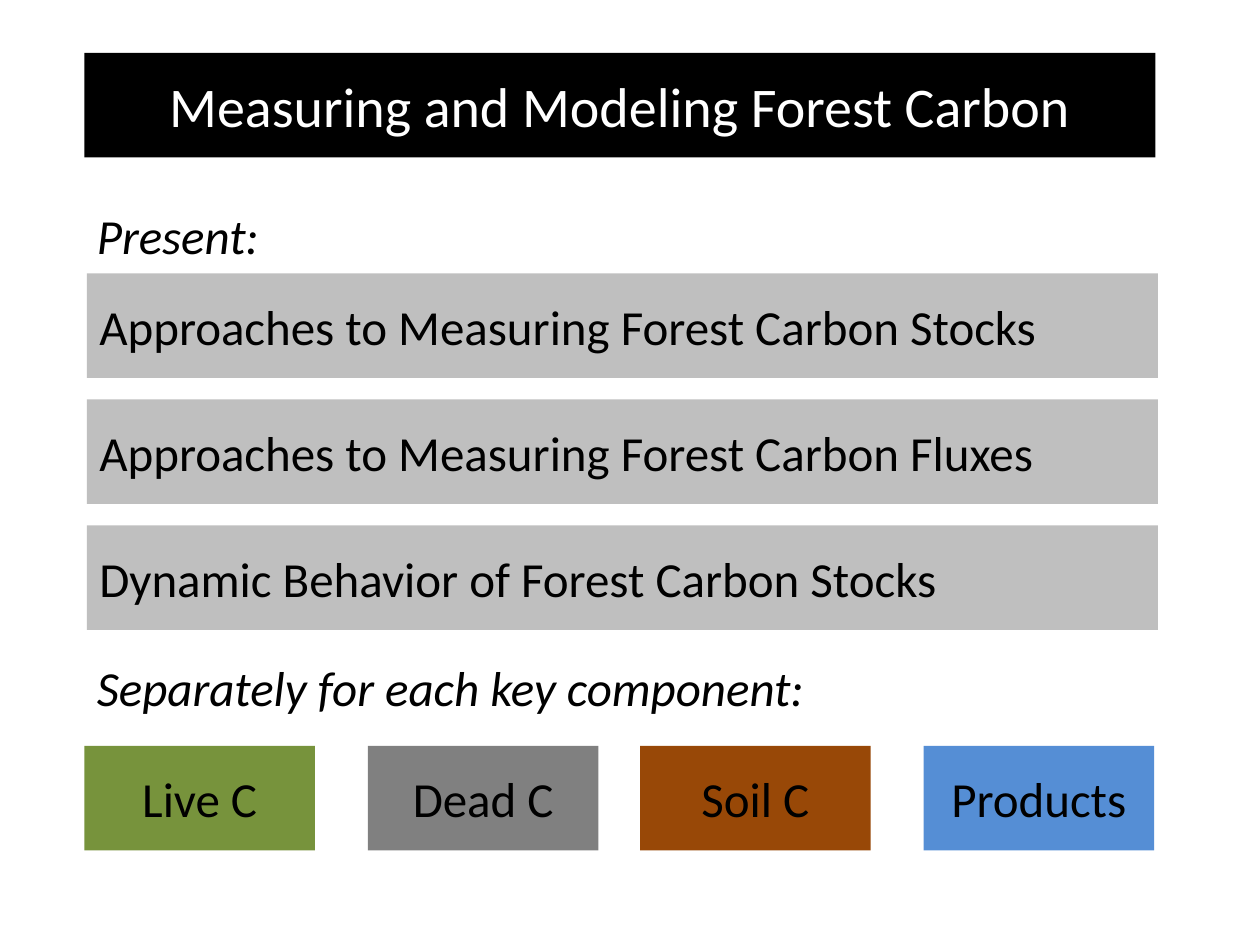
"""Build the forest carbon outline slide."""
from pptx import Presentation, util as u
from pptx.dml.color import RGBColor
from pptx.enum import shapes, text

BLACK = RGBColor(0, 0, 0)
WHITE = RGBColor(255, 255, 255)
SILVER = RGBColor(0xBF, 0xBF, 0xBF)
GREEN = RGBColor(0x77, 0x93, 0x3C)
GRAY = RGBColor(0x80, 0x80, 0x80)
BROWN = RGBColor(0x98, 0x48, 0x07)
BLUE = RGBColor(0x55, 0x8E, 0xD5)

LEFT, WIDE, HIGH = 0.67, 8.5, 0.83
LEAD, PITCH = 2.17, 1

deck = Presentation()
deck.slide_width, deck.slide_height = u.Inches(10), u.Inches(7.5)
slide = deck.slides.add_slide(deck.slide_layouts[5])


def write(item, words, size=28, color=BLACK, align=text.PP_ALIGN.LEFT, slant=False):
    frame = item.text_frame
    frame.text = words
    frame.auto_size = text.MSO_AUTO_SIZE.NONE
    line = frame.paragraphs[0]
    line.alignment = align
    font = line.runs[0].font
    font.name, font.size, font.italic = "Calibri", u.Pt(size), slant
    font.color.rgb = color


def block(x, y, wide, fill, words, align):
    box = slide.shapes.add_shape(
        shapes.MSO_SHAPE.RECTANGLE, *map(u.Inches, (x, y, wide, HIGH)))
    box.shadow.inherit = False
    box.fill.solid()
    box.fill.fore_color.rgb = fill
    box.line.fill.background()
    box.text_frame.vertical_anchor = text.MSO_ANCHOR.MIDDLE
    write(box, words, align=align)


title = slide.shapes.title
title.left, title.top, title.width, title.height = map(
    u.Inches, (LEFT, 0.42, WIDE, HIGH))
title.fill.solid()
title.fill.fore_color.rgb = BLACK
title.text_frame.vertical_anchor = text.MSO_ANCHOR.MIDDLE
write(title, "Measuring and Modeling Forest Carbon", 32, WHITE, text.PP_ALIGN.CENTER)

topics = [
    "Approaches to Measuring Forest Carbon Stocks",
    "Approaches to Measuring Forest Carbon Fluxes",
    "Dynamic Behavior of Forest Carbon Stocks",
]
for row, topic in enumerate(topics):
    block(LEFT + 0.02, LEAD + row * PITCH, WIDE, SILVER, topic, text.PP_ALIGN.LEFT)

labels = [("Present:", 1.58, 1.5), ("Separately for each key component:", 5.17, 5.87)]
for words, y, wide in labels:
    label = slide.shapes.add_textbox(*map(u.Inches, (LEFT, y, wide, 0.57)))
    write(label, words, slant=True)
    label.text_frame.word_wrap = False
    label.text_frame.auto_size = text.MSO_AUTO_SIZE.SHAPE_TO_FIT_TEXT

pools = [
    ("Live C", LEFT, GREEN),
    ("Dead C", 2.92, GRAY),
    ("Soil C", 5.08, BROWN),
    ("Products", 7.33, BLUE),
]
for words, x, fill in pools:
    block(x, 5.92, 1.83, fill, words, text.PP_ALIGN.CENTER)

deck.save("out.pptx")
